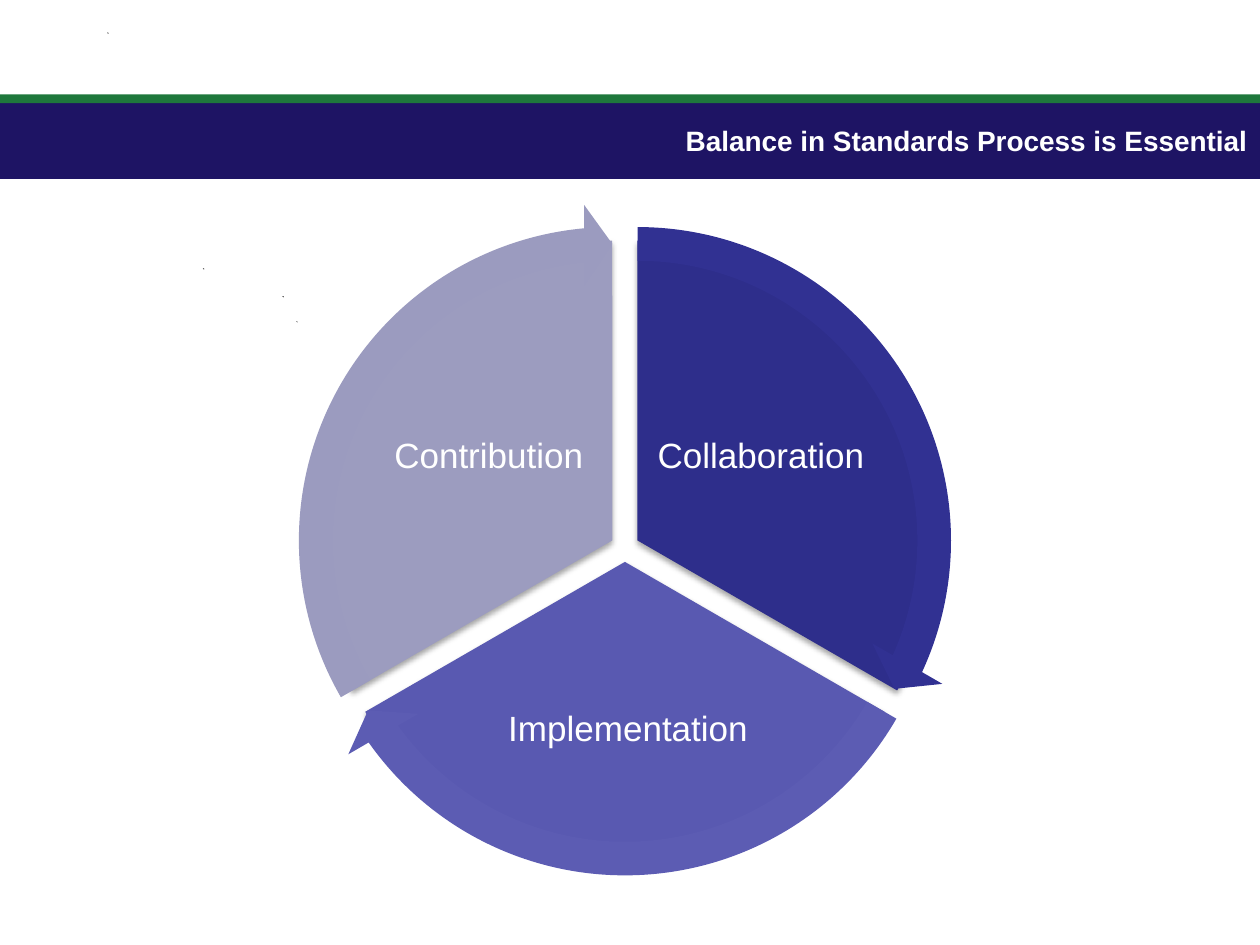
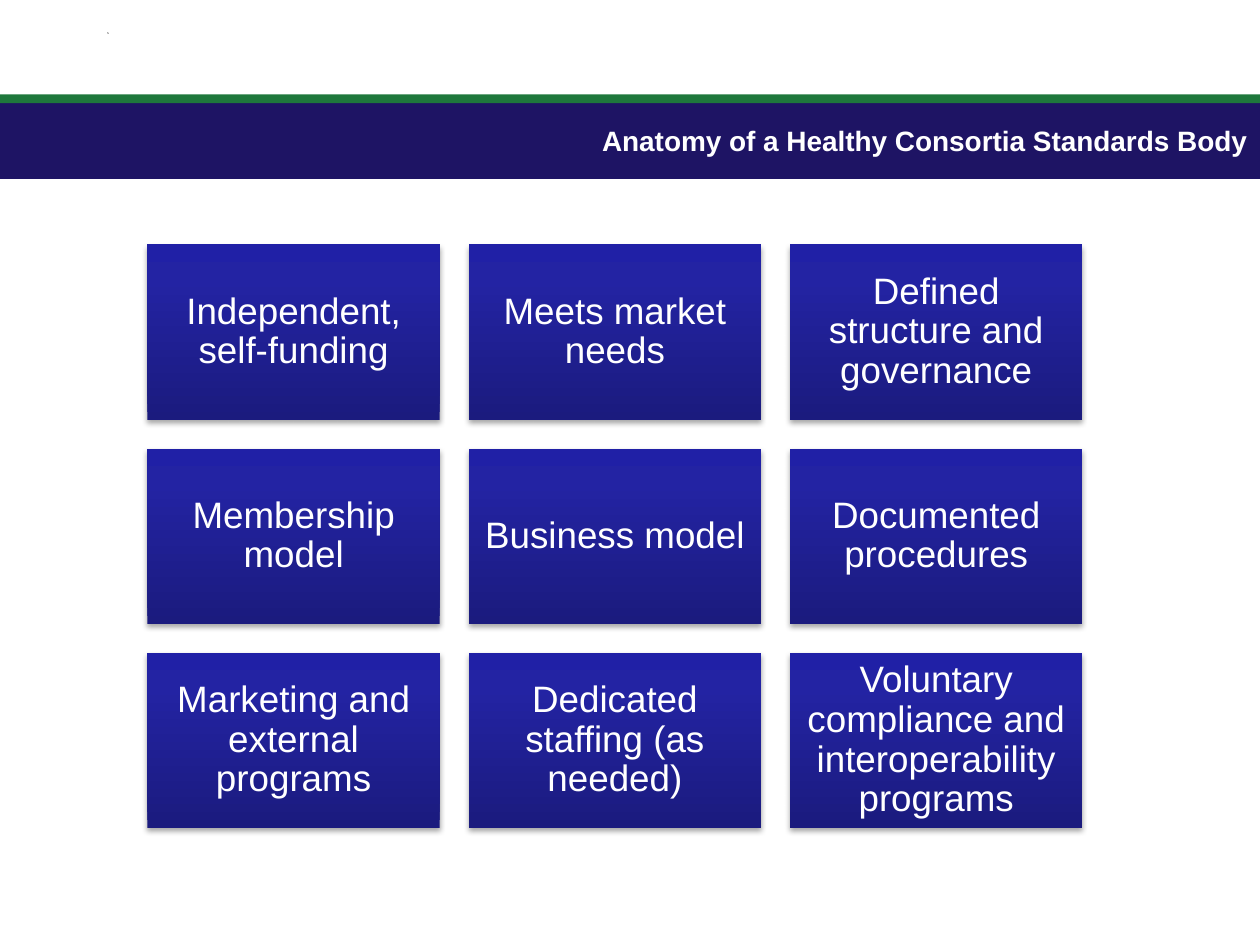
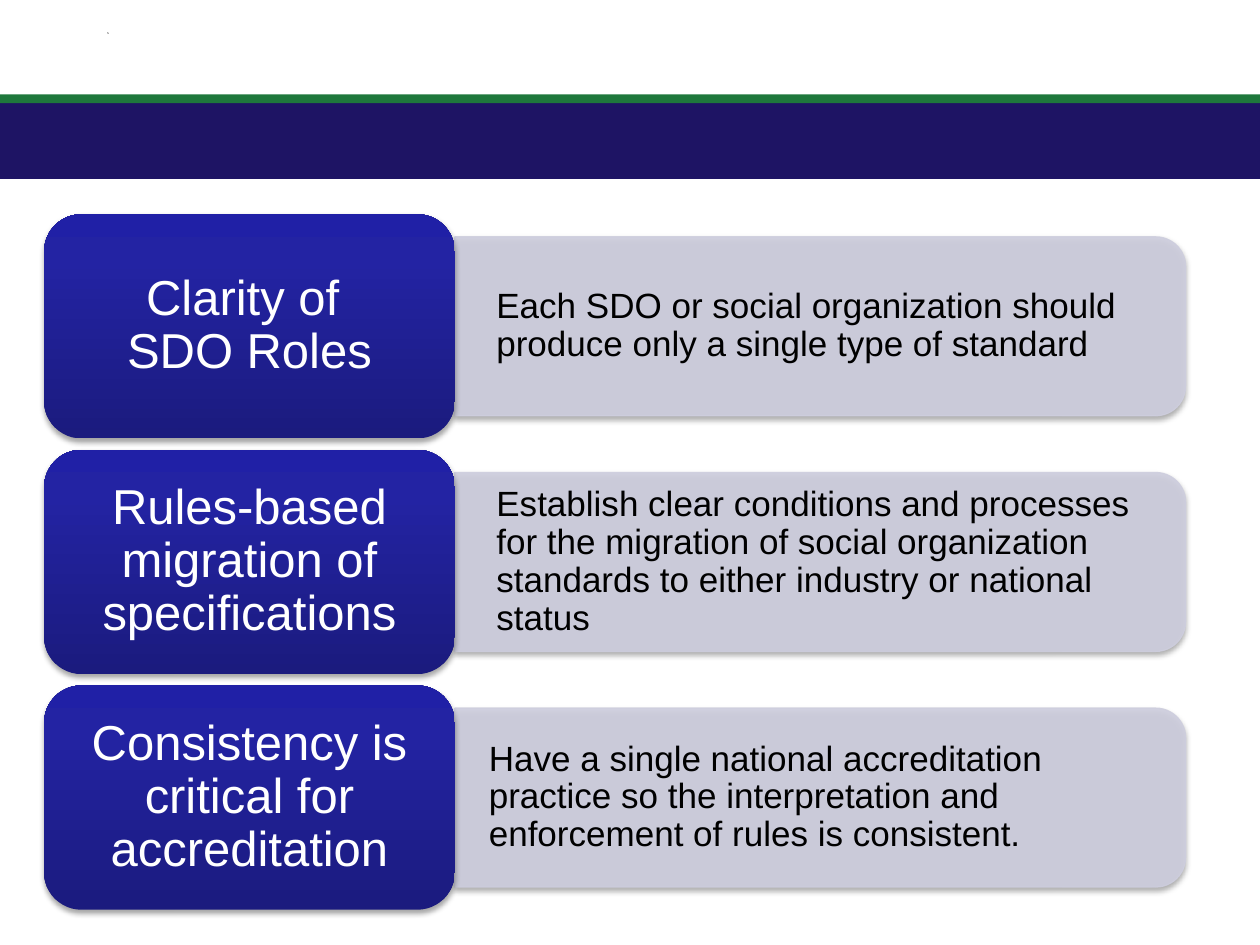
from pptx import Presentation
from pptx.dml.color import RGBColor
from pptx.enum.shapes import MSO_SHAPE as SHAPE
from pptx.enum.text import MSO_ANCHOR as ANCHOR, PP_ALIGN as ALIGN
from pptx.oxml import parse_xml
from pptx.oxml.ns import nsdecls, qn
from pptx.util import Inches, Pt

# Shared look
FONT = "Arial"
WHITE = RGBColor(0xFF, 0xFF, 0xFF)
BLACK = RGBColor(0x00, 0x00, 0x00)
NAVY = RGBColor(0x1E, 0x14, 0x64)
GREEN = RGBColor(0x1E, 0x78, 0x3C)
SPECK = RGBColor(0x1B, 0x1A, 0x1B)
LAVENDER = RGBColor(0xCE, 0xCE, 0xDE)
CARD_STOPS = [
    (0, RGBColor(0x1B, 0x1B, 0x7E)),
    (80, RGBColor(0x23, 0x23, 0xA3)),
    (100, RGBColor(0x20, 0x20, 0xA6)),
]
BANDS = [((0, 0.77, 10, 0.65), NAVY), ((0, 0.75, 10, 0.07), GREEN)]
SPECKS = [(1.61, 2.13), (2.24, 2.35), (2.35, 2.55), (0.85, 0.26)]
SPECK_SIZE = 0.01

# Content
CYCLE_TITLE = "Balance in Standards Process is Essential"
# Angles are in the units of the shape adjustments: 0.6 per degree
SECTORS = [
    {"label": "Collaboration", "pie_at": (2.68, 1.91), "label_box": (5.19, 2.92, 1.7, 1.42),
     "start": 162, "end": 18,
     "pie": RGBColor(0x2E, 0x2E, 0x8B), "arrow": RGBColor(0x31, 0x31, 0x92)},
    {"label": "Implementation", "pie_at": (2.58, 2.08), "label_box": (3.71, 5.17, 2.55, 1.25),
     "start": 18, "end": 90,
     "pie": RGBColor(0x59, 0x59, 0xB1), "arrow": RGBColor(0x5C, 0x5C, 0xB3)},
    {"label": "Contribution", "pie_at": (2.48, 1.91), "label_box": (3.03, 2.92, 1.7, 1.42),
     "start": 90, "end": 162,
     "pie": RGBColor(0x9C, 0x9C, 0xBF), "arrow": RGBColor(0x9B, 0x9B, 0xBF)},
]

ANATOMY_TITLE = "Anatomy of a Healthy Consortia Standards Body"
ANATOMY = [
    ["Independent, self-funding", "Meets market needs", "Defined structure and governance"],
    ["Membership model", "Business model", "Documented procedures"],
    ["Marketing and external programs", "Dedicated staffing (as needed)",
     "Voluntary compliance and interoperability programs"],
]

# Heading, detail, indent of the detail
PRINCIPLES = [
    ("Clarity of \nSDO Roles",
     "Each SDO or social organization should produce only a single type of standard", 0.25),
    ("Rules-based migration of specifications",
     "Establish clear conditions and processes for the migration of social organization "
     "standards to either industry or national status", 0.25),
    ("Consistency is critical for accreditation",
     "Have a single national accreditation practice so the interpretation and "
     "enforcement of rules is consistent.", 0.19),
]


def inches(values):
    return [Inches(value) for value in values]


def add_shadow(shape):
    shape._element.spPr.append(parse_xml(
        f'<a:effectLst {nsdecls("a")}><a:outerShdw blurRad="40000" dist="23000" dir="5400000" '
        'rotWithShape="0"><a:srgbClr val="000000"><a:alpha val="35000"/></a:srgbClr>'
        '</a:outerShdw></a:effectLst>'))


def add_block(slide, kind, box, color=None, shadow=False):
    """Add a preset shape; without a colour it gets the card gradient."""
    block = slide.shapes.add_shape(kind, *inches(box))
    block.line.fill.background()
    if color is None:
        block.fill.gradient()
        block.fill.gradient_angle = 90
        stops = block._element.spPr.find(".//" + qn("a:gsLst"))
        for stop in list(stops):
            stops.remove(stop)
        for position, stop_color in CARD_STOPS:
            stops.append(parse_xml(
                f'<a:gs {nsdecls("a")} pos="{position * 1000}">'
                f'<a:srgbClr val="{stop_color}"/></a:gs>'))
    else:
        block.fill.solid()
        block.fill.fore_color.rgb = color
    if shadow:
        add_shadow(block)
    else:
        block.shadow.inherit = False
    return block


def write(shape, text, size, color=WHITE, align=ALIGN.CENTER, insets=(0.1, 0.05),
          spacing=0.9, indent=0, bold=False):
    frame = shape.text_frame
    across, down = inches(insets)
    frame_format = {"word_wrap": True, "vertical_anchor": ANCHOR.MIDDLE,
                    "margin_left": across, "margin_right": across,
                    "margin_top": down, "margin_bottom": down}
    for key, value in frame_format.items():
        setattr(frame, key, value)
    paragraph = frame.paragraphs[0]
    paragraph.text = text
    paragraph.alignment = align
    paragraph.line_spacing = spacing
    if indent:
        paragraph._p.get_or_add_pPr().set("marL", str(Inches(indent)))
    for run in paragraph.runs:
        for key, value in {"name": FONT, "size": Pt(size), "bold": bold}.items():
            setattr(run.font, key, value)
        run.font.color.rgb = color


def add_label(slide, box, text, size, **text_format):
    write(slide.shapes.add_textbox(*inches(box)), text, size, **text_format)


def add_base(deck, title=None):
    """Add a slide with the specks, the bands and the title."""
    slide = deck.slides.add_slide(deck.slide_layouts[6])
    for left, top in SPECKS:
        right, bottom = left + SPECK_SIZE, top + SPECK_SIZE
        builder = slide.shapes.build_freeform(Inches(left), Inches(top))
        builder.add_line_segments([inches((right, top)), inches((right, bottom))])
        speck = builder.convert_to_shape()
        speck.fill.solid()
        speck.fill.fore_color.rgb = SPECK
        speck.line.fill.background()
        speck.shadow.inherit = False
    for box, color in BANDS:
        add_block(slide, SHAPE.RECTANGLE, box, color)
    if title:
        add_label(slide, (0, 0.84, 10, 0.55), title, 16, align=ALIGN.RIGHT, spacing=1, bold=True)
    return slide


def adjust(shape, values):
    for index, value in enumerate(values):
        shape.adjustments[index] = value


def build_cycle(deck):
    slide = add_base(deck, CYCLE_TITLE)
    pie_size, arrow_size, head_angle = 4.76, 5.35, 3.28
    margin = (arrow_size - pie_size) / 2
    for sector in SECTORS:
        pie = add_block(slide, SHAPE.PIE, (*sector["pie_at"], pie_size, pie_size),
                        sector["pie"], shadow=True)
        adjust(pie, (sector["start"], sector["end"]))
        add_label(slide, sector["label_box"], sector["label"], 20, insets=(0.03, 0.03))
    for sector in SECTORS:
        left, top = sector["pie_at"]
        arrow = add_block(slide, SHAPE.CIRCULAR_ARROW,
                          (left - margin, top - margin, arrow_size, arrow_size), sector["arrow"])
        adjust(arrow, (0.05, head_angle, sector["end"] - head_angle, sector["start"], 0.06))


def build_anatomy(deck):
    slide = add_base(deck, ANATOMY_TITLE)
    width, height, gap = 2.32, 1.39, 0.23
    for row, traits in enumerate(ANATOMY):
        for column, trait in enumerate(traits):
            box = (1.17 + column * (width + gap), 1.94 + row * (height + gap), width, height)
            write(add_block(slide, SHAPE.RECTANGLE, box, shadow=True), trait, 21,
                  insets=(0.09, 0.09))


def build_principles(deck):
    slide = add_base(deck)
    left, top, width, height, gap = 0.35, 1.7, 3.26, 1.78, 0.09
    bar_width, bar_height = 5.8, 1.42
    text_width, text_height = 5.73, 1.28
    bar_left = left + width
    for row, (heading, detail, indent) in enumerate(PRINCIPLES):
        card_top = top + row * (height + gap)
        middle = card_top + height / 2
        # Detail bar: an upright shape turned on its side
        bar = add_block(slide, SHAPE.ROUND_2_SAME_RECTANGLE,
                        (bar_left + (bar_width - bar_height) / 2, middle - bar_width / 2,
                         bar_height, bar_width), LAVENDER, shadow=True)
        bar.rotation = 90
        bar.line.color.rgb = LAVENDER
        bar.line.width = Pt(0.75)
        for color in bar._element.spPr.findall(".//" + qn("a:solidFill") + "/" + qn("a:srgbClr")):
            color.append(parse_xml(f'<a:alpha {nsdecls("a")} val="90000"/>'))
        add_label(slide, (bar_left, middle - text_height / 2, text_width, text_height), detail, 20,
                  color=BLACK, align=ALIGN.LEFT, insets=(0.08, 0.04), indent=indent)
        # Heading card
        card = add_block(slide, SHAPE.ROUNDED_RECTANGLE, (left, card_top, width, height),
                         shadow=True)
        write(card, heading, 28, insets=(0.12, 0.06))


def main():
    deck = Presentation()
    deck.slide_width, deck.slide_height = Inches(10), Inches(7.5)
    build_cycle(deck)
    build_anatomy(deck)
    build_principles(deck)
    deck.save("out.pptx")


if __name__ == "__main__":
    main()
